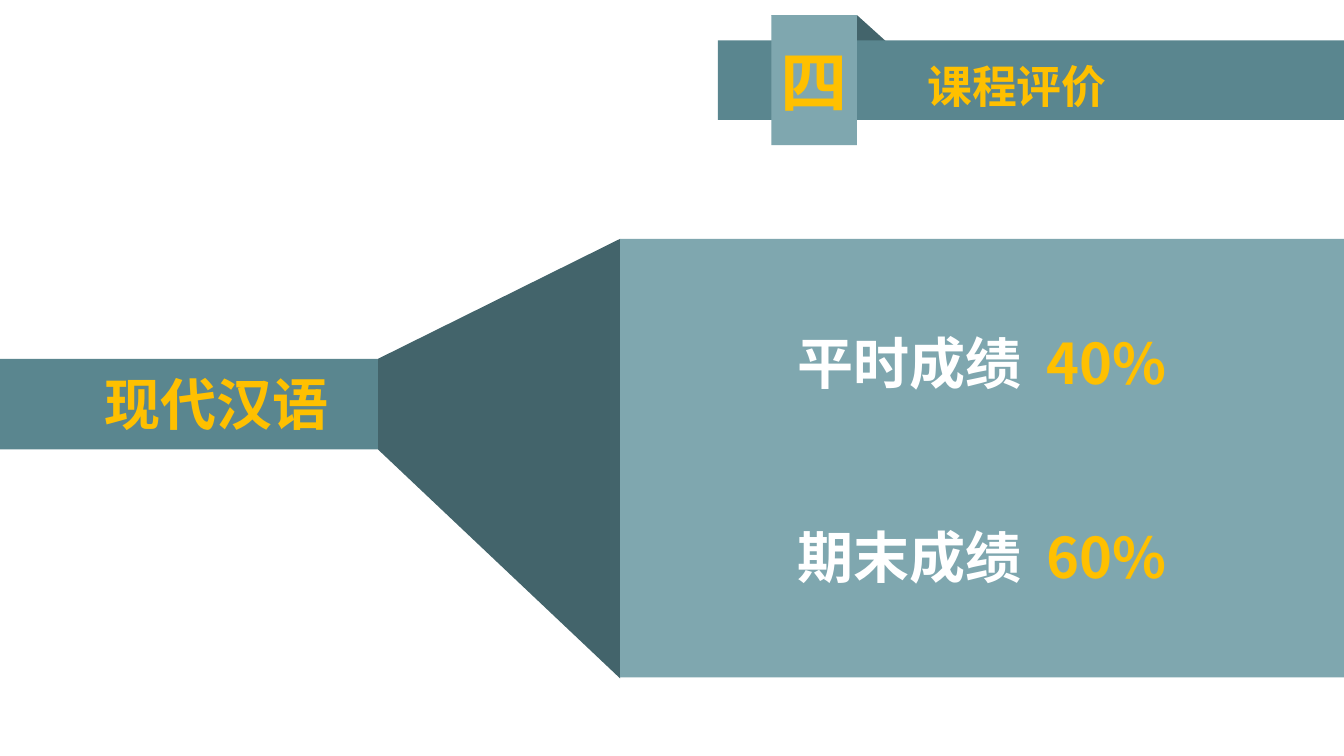
from lxml.etree import SubElement as Sub
from pptx import Presentation
from pptx.dml.color import RGBColor as RGB
from pptx.enum.shapes import MSO_SHAPE as Shape
from pptx.enum.text import MSO_ANCHOR as Anchor, MSO_AUTO_SIZE as Auto, PP_ALIGN as Align
from pptx.oxml.ns import qn
from pptx.util import Inches, Pt

FONT = "Noto Sans CJK SC"
HUE = {
    "dark": "43646B",
    "mid": "5A868F",
    "light": "7FA7AF",
    "gold": "FFC000",
    "white": "FFFFFF",
}
WIDE, HIGH = 13.33, 7.5
FOLD = 6.15
MARKS = [("平时成绩", "40%", 2.88), ("期末成绩", "60%", 4.8)]


def paint(shape, hue):
    shape.shadow.inherit = False
    shape.fill.solid()
    shape.fill.fore_color.rgb = RGB.from_string(HUE[hue])
    shape.line.fill.background()
    return shape


def add_rect(slide, box, hue):
    lens = [Inches(n) for n in box]
    return paint(slide.shapes.add_shape(Shape.RECTANGLE, *lens), hue)


def add_poly(slide, points, hue):
    first, *rest = [(Inches(x), Inches(y)) for x, y in points]
    form = slide.shapes.build_freeform(*first, scale=1.0)
    form.add_line_segments(rest, close=True)
    return paint(form.convert_to_shape(), hue)


def set_frame(shape, side, edge, anchor=Anchor.TOP):
    frame = shape.text_frame
    frame.word_wrap = True
    frame.auto_size = Auto.NONE
    frame.vertical_anchor = anchor
    frame.margin_left = frame.margin_right = Inches(side)
    frame.margin_top = frame.margin_bottom = Inches(edge)
    return frame.paragraphs[0]


def add_box(slide, box, side, edge):
    shape = slide.shapes.add_textbox(*[Inches(n) for n in box])
    para = set_frame(shape, side, edge)
    para.alignment = Align.CENTER
    return para


def add_run(para, text, hue, size=40, **attrs):
    run = para.add_run()
    run.text = text
    run.font.size = Pt(size)
    run.font.bold = True
    run.font.color.rgb = RGB.from_string(HUE[hue])
    run.font.name = FONT
    props = run._r.get_or_add_rPr()
    Sub(props, qn("a:ea")).set("typeface", FONT)
    for key, value in attrs.items():
        props.set(key, value)


def add_head(slide):
    add_poly(slide, [(7.65, 0.15), (8.5, 0.15), (9.33, 0.9)], "dark")
    add_rect(slide, (7.12, 0.4, WIDE - 7.12, 0.79), "mid")
    badge = add_rect(slide, (7.65, 0.15, 0.85, 1.29), "light")
    para = set_frame(badge, 0, 0.05, Anchor.MIDDLE)
    para.alignment = Align.CENTER
    add_run(para, "四", "gold", 48)

    title = slide.shapes.title
    title.left, title.top = Inches(9.12), Inches(0.43)
    title.width, title.height = Inches(3.39), Inches(0.74)
    para = set_frame(title, 0.08, 0.04)
    para.alignment = Align.LEFT
    add_run(para, "课程评价", "gold", cap="small")
    slide.shapes._spTree.append(title._element)


def add_course(slide):
    add_rect(slide, (0, 3.56, 3.75, 0.9), "mid")
    add_poly(slide, [(FOLD, 2.37), (FOLD, 6.73), (3.75, 4.46), (3.75, 3.56)], "dark")
    add_rect(slide, (FOLD, 2.37, WIDE - FOLD, 4.35), "light")
    para = add_box(slide, (0.95, 3.62, 2.4, 0.77), 0, 0.05)
    add_run(para, "现代汉语", "gold")


def add_mark(slide, name, share, top):
    para = add_box(slide, (6.95, top, 5.58, 0.99), 0.1, 0.05)
    para.line_spacing = 1.5
    add_run(para, name, "white")
    add_run(para, " ", "white", spc="900")
    add_run(para, share, "gold")


def main():
    deck = Presentation()
    deck.slide_width, deck.slide_height = Inches(WIDE), Inches(HIGH)
    slide = deck.slides.add_slide(deck.slide_layouts[5])
    add_head(slide)
    add_course(slide)
    for mark in MARKS:
        add_mark(slide, *mark)
    deck.save("out.pptx")


if __name__ == "__main__":
    main()
